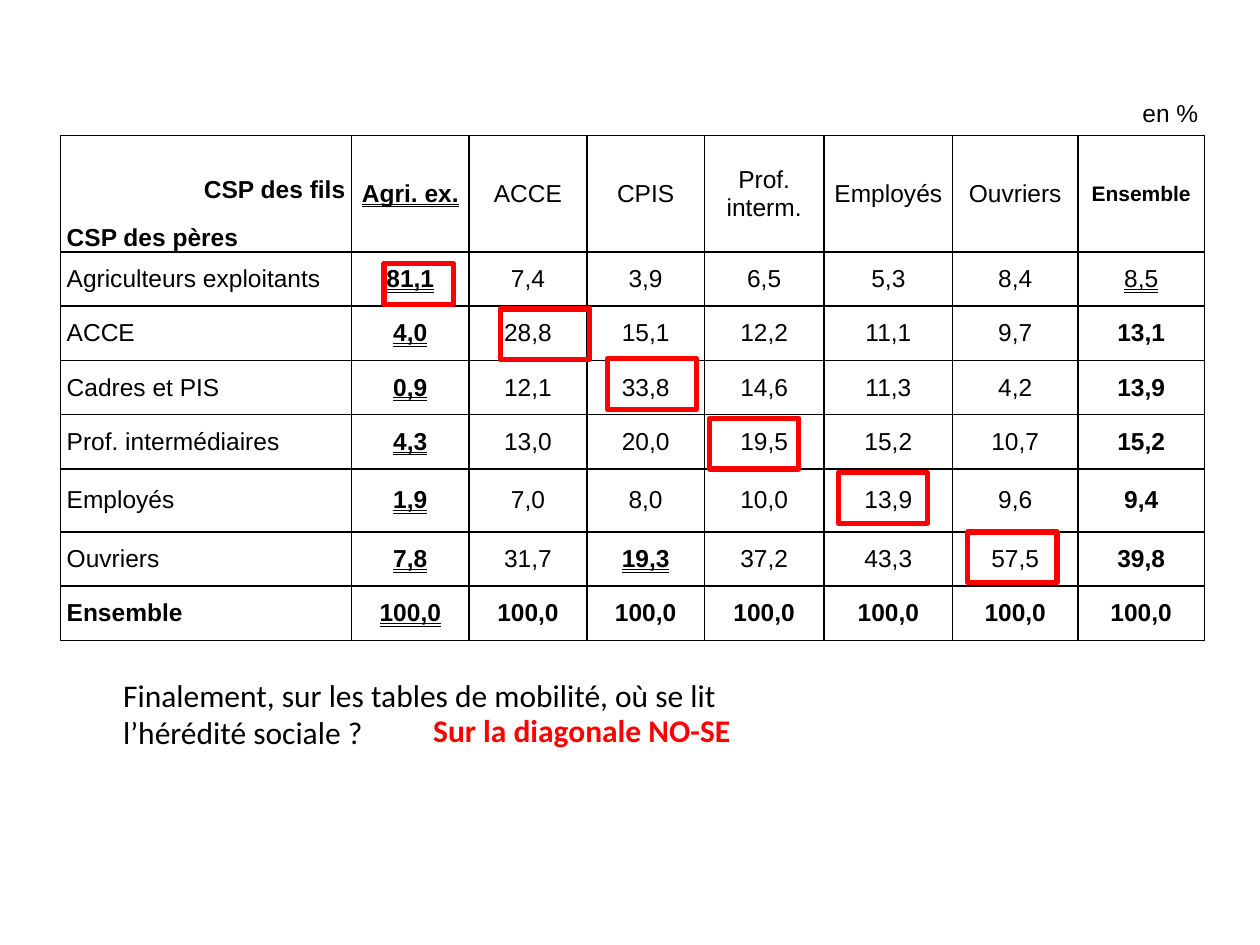
from lxml.etree import SubElement
from pptx import Presentation
from pptx.dml.color import RGBColor
from pptx.enum.shapes import MSO_SHAPE as Shape
from pptx.enum.text import MSO_ANCHOR as Anchor, MSO_UNDERLINE as Underline, PP_ALIGN as Align
from pptx.oxml.ns import qn
from pptx.util import Pt

COLORS = {"ink": "000000", "accent": "FF0000"}
BLANK_LAYOUT = 6

COLUMN_WIDTHS = [166.5, 67, 67.5, 67, 68.5, 73.5, 71.5, 72.5]
ROW_HEIGHTS = [24.5, 66.5, 31, 31, 31, 31, 36, 31, 31]
SON_CLASSES = ["Agri. ex.", "ACCE", "CPIS", "Prof. interm.", "Employés", "Ouvriers", "Ensemble"]
FATHER_ROWS = [
    ["Agriculteurs exploitants", "81,1", "7,4", "3,9", "6,5", "5,3", "8,4", "8,5"],
    ["ACCE", "4,0", "28,8", "15,1", "12,2", "11,1", "9,7", "13,1"],
    ["Cadres et PIS", "0,9", "12,1", "33,8", "14,6", "11,3", "4,2", "13,9"],
    ["Prof. intermédiaires", "4,3", "13,0", "20,0", "19,5", "15,2", "10,7", "15,2"],
    ["Employés", "1,9", "7,0", "8,0", "10,0", "13,9", "9,6", "9,4"],
    ["Ouvriers", "7,8", "31,7", "19,3", "37,2", "43,3", "57,5", "39,8"],
    ["Ensemble"] + ["100,0"] * 7,
]
LAST_ROW, LAST_COLUMN = len(ROW_HEIGHTS) - 1, len(COLUMN_WIDTHS) - 1
AGRI_TOTAL = (2, LAST_COLUMN)
OUVRIERS_CPIS = (7, 3)

AGRI_FRAME = (219.5, 150.5, 39.5, 23.5)
DIAGONAL_CORNERS = [(286, 176.5), (347, 205), (405.5, 239), (479, 270), (553, 304)]
FRAME_SIZE = (51, 29)


class SlideBuilder:
    def __init__(self, slide):
        self.slide = slide

    def color(self, name):
        return RGBColor.from_string(COLORS[name])

    def style(self, paragraph, font, size, color="ink", bold=False, underlined=False):
        paragraph.font.name = font
        paragraph.font.size = Pt(size)
        paragraph.font.color.rgb = self.color(color)
        paragraph.font.bold = bold
        if underlined:
            paragraph.font.underline = Underline.DOUBLE_LINE

    def text(self, content, left, top, width, height, color="ink", bold=False, indent=0):
        box = self.slide.shapes.add_textbox(Pt(left), Pt(top), Pt(width), Pt(height))
        box.text_frame.word_wrap = True
        paragraph = box.text_frame.paragraphs[0]
        paragraph.text = content
        self.style(paragraph, "Calibri", 18, color, bold)
        if indent:
            paragraph.level = 2
            properties = paragraph._p.get_or_add_pPr()
            properties.set("marL", str(Pt(indent)))
            properties.set("indent", "0")

    def frame(self, left, top, width, height):
        frame = self.slide.shapes.add_shape(Shape.RECTANGLE, Pt(left), Pt(top), Pt(width), Pt(height))
        frame.shadow.inherit = False
        frame.fill.background()
        frame.line.color.rgb = self.color("accent")
        frame.line.width = Pt(3)

    def table(self, left, top, widths, heights):
        table = self.slide.shapes.add_table(
            len(heights), len(widths), Pt(left), Pt(top), Pt(sum(widths)), Pt(sum(heights))).table
        table.first_row = table.horz_banding = False
        for column, width in zip(table.columns, widths):
            column.width = Pt(width)
        for row, height in zip(table.rows, heights):
            row.height = Pt(height)
        return table

    def borders(self, cell, sides):
        for side in sides:
            line = SubElement(cell._tc.get_or_add_tcPr(), qn(f"a:ln{side}"), w=str(Pt(1)))
            fill = SubElement(line, qn("a:solidFill"))
            SubElement(fill, qn("a:srgbClr"), val=COLORS["ink"])

    def cell(self, cell, content, align, sides="LRTB", size=14, bold=False, underlined=False):
        self.borders(cell, sides)
        cell.fill.background()
        cell.margin_left = cell.margin_right = Pt(3.6)
        cell.margin_top = cell.margin_bottom = 0
        cell.vertical_anchor = Anchor.MIDDLE
        cell.text = content
        for paragraph in cell.text_frame.paragraphs:
            paragraph.alignment = align
            self.style(paragraph, "Arial", size, "ink", bold, underlined)


def fill_mobility_table(builder, table):
    table.cell(0, 0).merge(table.cell(0, LAST_COLUMN))
    builder.cell(table.cell(0, 0), "en %", Align.RIGHT, sides="B")
    for column in range(1, LAST_COLUMN + 1):
        builder.borders(table.cell(0, column), "B")

    corner = table.cell(1, 0)
    builder.cell(corner, "CSP des fils\nCSP des pères", Align.LEFT, bold=True)
    corner.vertical_anchor = Anchor.BOTTOM
    sons, fathers = corner.text_frame.paragraphs
    sons.alignment = Align.RIGHT
    sons.space_after = Pt(12)
    fathers.space_after = Pt(3)

    for column, son_class in enumerate(SON_CLASSES, 1):
        builder.cell(table.cell(1, column), son_class, Align.CENTER,
                     size=12 if column == LAST_COLUMN else 14,
                     bold=column in (1, LAST_COLUMN), underlined=column == 1)

    for row, contents in enumerate(FATHER_ROWS, 2):
        for column, content in enumerate(contents):
            place = (row, column)
            emphasised = row == LAST_ROW or column in (1, LAST_COLUMN) or place == OUVRIERS_CPIS
            builder.cell(table.cell(row, column), content,
                         Align.CENTER if column else Align.LEFT,
                         bold=emphasised and place != AGRI_TOTAL,
                         underlined=column == 1 or place in (AGRI_TOTAL, OUVRIERS_CPIS))


def main():
    presentation = Presentation()
    presentation.slide_width, presentation.slide_height = Pt(720), Pt(540)
    builder = SlideBuilder(presentation.slides.add_slide(presentation.slide_layouts[BLANK_LAYOUT]))

    fill_mobility_table(builder, builder.table(34.5, 53, COLUMN_WIDTHS, ROW_HEIGHTS))
    builder.text("Finalement, sur les tables de mobilité, où se lit l’hérédité sociale ?",
                 -8.64, 382.5, 487.5, 51, indent=72)
    builder.text("Sur la diagonale NO-SE", 240.5, 402.5, 481.5, 29, color="accent", bold=True)

    builder.frame(*AGRI_FRAME)
    for corner in DIAGONAL_CORNERS:
        builder.frame(*corner, *FRAME_SIZE)
    presentation.save("out.pptx")


if __name__ == "__main__":
    main()
